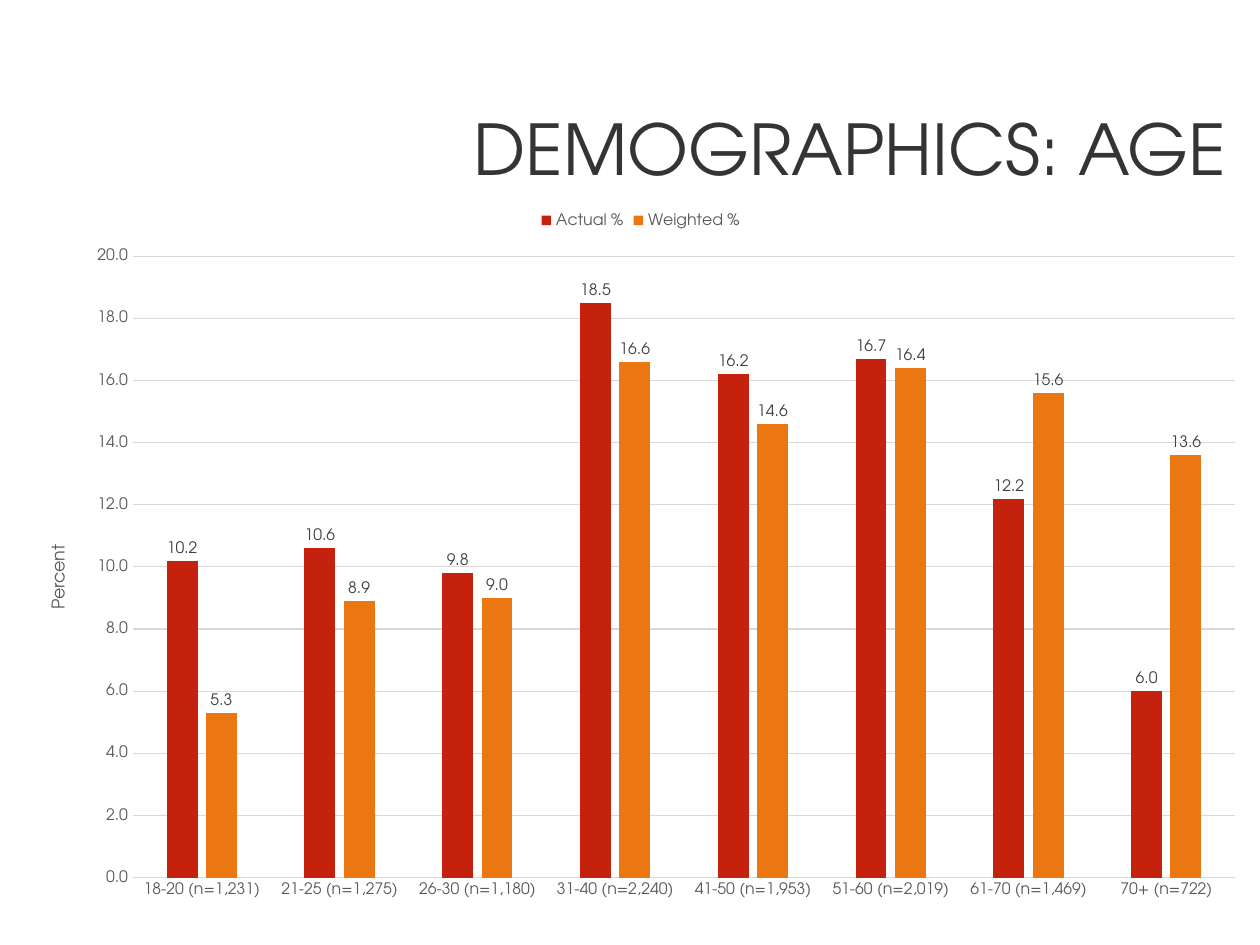
from pptx import Presentation, util as u
from pptx.chart.data import CategoryChartData
from pptx.dml.color import RGBColor
from pptx.enum import chart as ch, text
from pptx.oxml import parse_xml
from pptx.oxml.ns import nsdecls, qn

FONT = "TeX Gyre Adventor"
CATEGORIES = ["18-20 (n=1,231)", "21-25 (n=1,275)", "26-30 (n=1,180)", "31-40 (n=2,240)",
              "41-50 (n=1,953)", "51-60 (n=2,019)", "61-70 (n=1,469)", "70+ (n=722)"]
SERIES = [
    ("Actual %", "C4220D", [10.2, 10.6, 9.8, 18.5, 16.2, 16.7, 12.2, 6]),
    ("Weighted %", "EB7712", [5.3, 8.9, 9, 16.6, 14.6, 16.4, 15.6, 13.6]),
]


def rgb(value):
    """Turn a hex string into a colour."""
    return RGBColor.from_string(value)


def style(font, size, color):
    """Set typeface, size and colour of a font."""
    font.name, font.size, font.bold = FONT, u.Pt(size), False
    font.color.rgb = rgb(color)


def add_text(s, value, x, y, w, h, size=18, color="000000", align="LEFT", spacing=1.0):
    """Add a wrapped text box with vertically centred text."""
    tf = s.shapes.add_textbox(*map(u.Inches, (x, y, w, h))).text_frame
    tf.word_wrap = True
    tf.vertical_anchor = text.MSO_ANCHOR.MIDDLE
    p = tf.paragraphs[0]
    p.alignment = getattr(text.PP_ALIGN, align)
    p.line_spacing = spacing
    r = p.add_run()
    r.text = value
    style(r.font, size, color)


def place(element, index, **fractions):
    """Give a chart part a manual layout in fractions of the chart."""
    for old in element.findall(qn("c:layout")):
        element.remove(old)
    target = '<c:layoutTarget val="inner"/>' if "w" in fractions else ""
    modes = "".join(f'<c:{k}Mode val="edge"/>' for k in "xy")
    values = "".join(f'<c:{k} val="{v}"/>' for k, v in fractions.items())
    element.insert(index, parse_xml(
        f'<c:layout {nsdecls("c")}><c:manualLayout>{target}{modes}{values}'
        "</c:manualLayout></c:layout>"))


def style_axes(chart):
    """Format both axes, the gridlines and the axis title."""
    cat, val = chart.category_axis, chart.value_axis
    for axis in (cat, val):
        axis.major_tick_mark = axis.minor_tick_mark = ch.XL_TICK_MARK.NONE
        style(axis.tick_labels.font, 9, "595959")
    for line in (cat.format.line, val.major_gridlines.format.line):
        line.color.rgb = rgb("D9D9D9")
        line.width = u.Pt(0.75)
    val.format.line.fill.background()
    val.minimum_scale, val.maximum_scale, val.major_unit = 0, 20, 2
    val.tick_labels.number_format = "0.0"
    val.tick_labels.number_format_is_linked = False
    title = val.axis_title
    p = title.text_frame.paragraphs[0]
    r = p.add_run()
    r.text = "Percent"
    style(r.font, 10, "595959")
    title.text_frame._txBody.bodyPr.set("rot", "-5400000")
    place(title._element, 1, x=0.02, y=0.48)


def style_series(series, color):
    """Colour one series and show its values above the columns."""
    series.format.fill.solid()
    series.format.fill.fore_color.rgb = rgb(color)
    series.invert_if_negative = False
    labels = series.data_labels
    labels.show_value = True
    labels.position = ch.XL_LABEL_POSITION.OUTSIDE_END
    labels.number_format = "0.0"
    labels.number_format_is_linked = False
    style(labels.font, 9, "404040")


def add_age_chart(s, x, y, w, h):
    """Add the clustered column chart of age groups."""
    data = CategoryChartData(number_format="0.0")
    data.categories = CATEGORIES
    for name, _, values in SERIES:
        data.add_series(name, values)
    chart = s.shapes.add_chart(ch.XL_CHART_TYPE.COLUMN_CLUSTERED,
                               *map(u.Inches, (x, y, w, h)), data).chart
    style(chart.font, 10, "000000")
    chart.has_title = False
    chart.has_legend = True
    chart.legend.position = ch.XL_LEGEND_POSITION.TOP
    chart.legend.include_in_layout = False
    style(chart.legend.font, 9, "595959")
    plot = chart.plots[0]
    plot.gap_width, plot.overlap, plot.vary_by_categories = 219, -27, False
    for series, (_, color, _) in zip(plot.series, SERIES):
        style_series(series, color)
    style_axes(chart)
    place(chart._chartSpace.chart.plotArea, 0, x=0.09, y=0.08, w=0.89, h=0.87)


def main():
    """Build the slide and save it."""
    prs = Presentation()
    prs.slide_width, prs.slide_height = u.Inches(10), u.Inches(7.5)
    s = prs.slides.add_slide(prs.slide_layouts[6])
    add_text(s, "DEMOGRAPHICS: AGE", 0.51, 0.67, 9.32, 1.09,
             size=40, color="343434", align="RIGHT", spacing=0.9)
    add_age_chart(s, 0.17, 1.58, 9.83, 5.67)
    prs.save("out.pptx")


if __name__ == "__main__":
    main()
